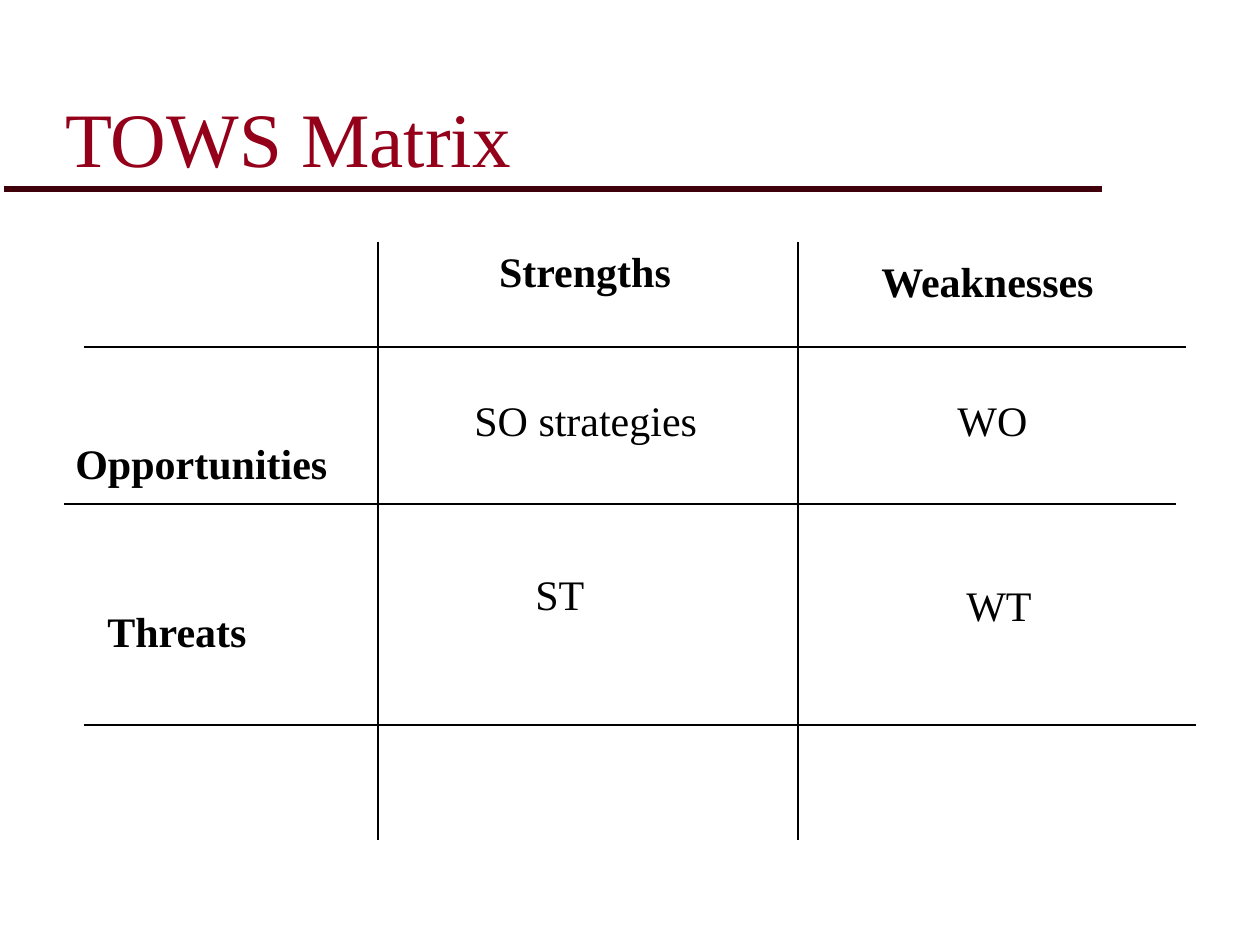
"""Build the TOWS matrix slide."""
from dataclasses import dataclass

from lxml.etree import SubElement
from pptx import Presentation
from pptx.dml.color import RGBColor
from pptx.enum.shapes import MSO_CONNECTOR as Connector
from pptx.enum.text import MSO_ANCHOR as Anchor, MSO_AUTO_SIZE as AutoSize, PP_ALIGN as Align
from pptx.oxml.ns import qn
from pptx.slide import Slide
from pptx.util import Emu, Pt

EMU_PER_PX = 914400 / 126
FONT = "Times New Roman"
BLACK, CRIMSON, MAROON = "000000", "940019", "3F000B"
LABEL_HEIGHT = 63
COLUMN_TOP, COLUMN_BOTTOM = 242, 840


@dataclass
class Rule:
    x1: int
    y1: int
    x2: int
    y2: int
    color: str = BLACK
    weight: int = 1


@dataclass
class Label:
    text: str
    left: int
    top: int
    width: int
    height: int = LABEL_HEIGHT
    bold: bool = False
    size: int = 24
    color: str = BLACK
    align: Align = Align.LEFT
    anchor: Anchor = Anchor.TOP
    wrap: bool = False


TITLE_RULE = Rule(4, 189, 1102, 189, MAROON, 4)
TITLE = Label("TOWS Matrix", 53, 37, 1071, 152, size=44, color=CRIMSON,
              anchor=Anchor.BOTTOM, wrap=True)
COLUMN_RULES = [Rule(x, COLUMN_TOP, x, COLUMN_BOTTOM) for x in (378, 798)]
ROW_RULES = [Rule(left, y, right, y)
             for left, right, y in ((84, 1186, 347), (64, 1176, 504), (84, 1196, 725))]
HEADINGS = [
    Label("Strengths", 486, 239, 198, bold=True, align=Align.CENTER),
    Label("Weaknesses", 869, 249, 239, bold=True),
    Label("Opportunities", 63, 431, 277, bold=True),
    Label("Threats", 95, 599, 165, bold=True),
]
STRATEGIES = [
    Label("SO strategies", 462, 388, 248),
    Label("WO", 945, 388, 96),
    Label("ST", 523, 562, 74),
    Label("WT", 954, 573, 91),
]


def px(value: int) -> Emu:
    """Turn pixels into EMU."""
    return Emu(round(value * EMU_PER_PX))


def rgb(color: str) -> RGBColor:
    """Turn a hex string into a colour."""
    return RGBColor.from_string(color)


def draw_rule(slide: Slide, rule: Rule) -> None:
    """Draw a straight line without a shadow."""
    line = slide.shapes.add_connector(
        Connector.STRAIGHT, px(rule.x1), px(rule.y1), px(rule.x2), px(rule.y2))
    line.line.color.rgb = rgb(rule.color)
    line.line.width = Pt(rule.weight)
    SubElement(line._element.spPr, qn("a:effectLst"))


def draw_label(slide: Slide, label: Label) -> None:
    """Draw a text box holding one run."""
    box = slide.shapes.add_textbox(
        px(label.left), px(label.top), px(label.width), px(label.height))
    frame = box.text_frame
    frame.word_wrap = label.wrap
    frame.auto_size = AutoSize.NONE if label.wrap else AutoSize.SHAPE_TO_FIT_TEXT
    frame.vertical_anchor = label.anchor
    para = frame.paragraphs[0]
    para.alignment = label.align
    span = para.add_run()
    span.text = label.text
    span.font.name = FONT
    span.font.size = Pt(label.size)
    span.font.bold = label.bold
    span.font.color.rgb = rgb(label.color)


def main() -> None:
    """Build and save the deck."""
    deck = Presentation()
    deck.slide_width, deck.slide_height = px(1260), px(945)
    slide = deck.slides.add_slide(deck.slide_layouts[6])
    for rule in [TITLE_RULE, *COLUMN_RULES, *ROW_RULES]:
        draw_rule(slide, rule)
    for label in [TITLE, *HEADINGS, *STRATEGIES]:
        draw_label(slide, label)
    deck.save("out.pptx")


if __name__ == "__main__":
    main()
